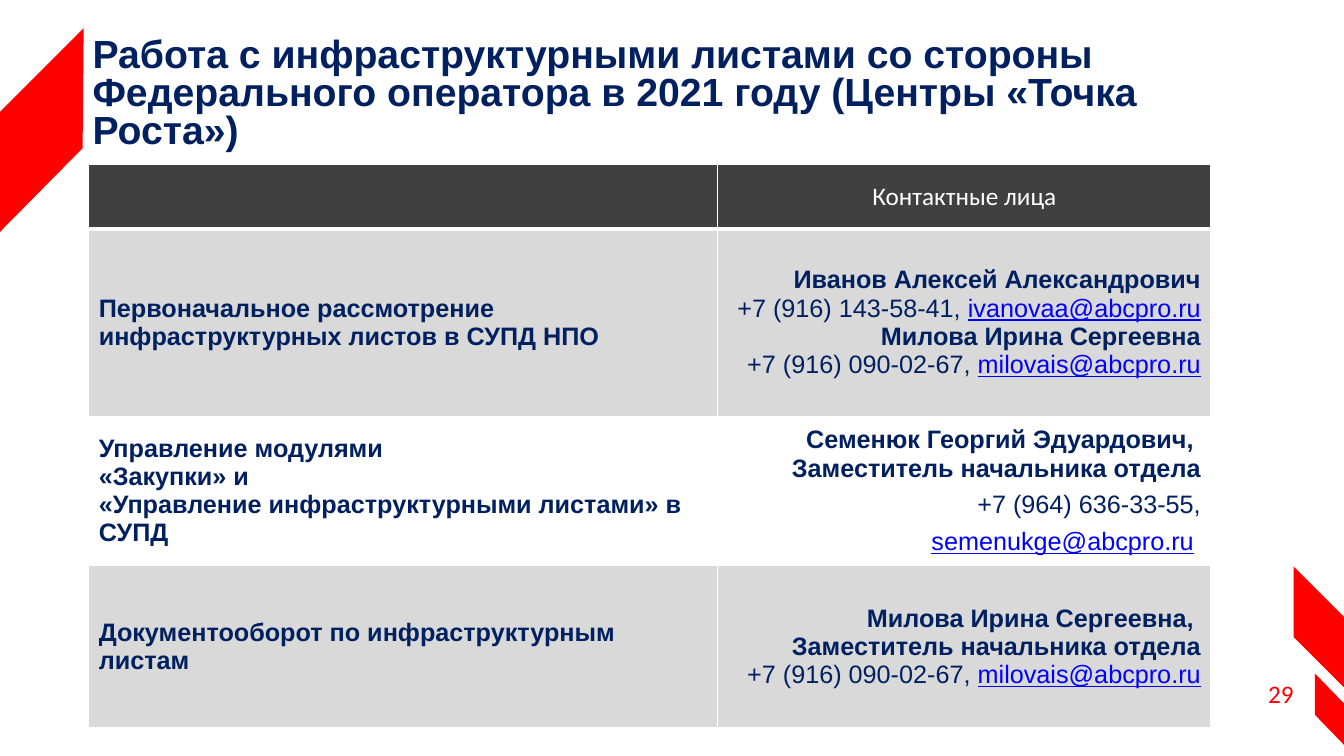
from lxml import etree
from pptx import Presentation
from pptx.dml.color import RGBColor
from pptx.enum.text import MSO_ANCHOR, PP_ALIGN
from pptx.oxml.ns import qn
from pptx.util import Inches, Pt

LEFT, MID, RIGHT = PP_ALIGN.LEFT, PP_ALIGN.CENTER, PP_ALIGN.RIGHT
CENTER = MSO_ANCHOR.MIDDLE

RED, NAVY, BLUE = "FF0000", "002060", "0000FF"
WHITE, DARK, GREY = "FFFFFF", "404040", "D9D9D9"

BANDS = [
    [(0, 2.3), (0, 1.11), (0.83, 0.28), (0.82, 1.47)],
    [(13.33, 6.82), (12.83, 6.32), (12.83, 5.62), (13.33, 6.12)],
    [(13.33, 7.39), (13.04, 7.09), (13.04, 6.68), (13.33, 6.98)],
]
TITLE = ("Работа с инфраструктурными листами со стороны Федерального "
         "оператора в 2021 году (Центры «Точка Роста»)")

# Each contact line is (text before the address, address, text after, spacing);
# a plain string is a bold line.
MILOVA = ("+7 (916) 090-02-67, ", "milovais@abcpro.ru", "", None)
DEPUTY = "Заместитель начальника отдела"
ROWS = [
    (["Первоначальное рассмотрение инфраструктурных листов в СУПД НПО"],
     ["Иванов Алексей Александрович",
      ("+7 (916) 143-58-41, ", "ivanovaa@abcpro.ru", "", None),
      "Милова Ирина Сергеевна", MILOVA]),
    (["Управление модулями", "«Закупки» и",
      "«Управление инфраструктурными листами» в СУПД"],
     ["Семенюк Георгий Эдуардович, ", DEPUTY,
      ("+7 (964) 636-33-55, ", "semenukge@abcpro.ru", " ", 1.3)]),
    (["Документооборот по инфраструктурным листам"],
     ["Милова Ирина Сергеевна, ", DEPUTY, MILOVA]),
]
WIDTHS = [6.24, 4.89]
HEIGHTS = [0.64, 1.86, 1.48, 1.61]


def color(code):
    return RGBColor.from_string(code)


class Deck:
    def __init__(self):
        self.show = Presentation()
        self.show.slide_width = Inches(13.33)
        self.show.slide_height = Inches(7.5)
        self.slide = self.show.slides.add_slide(self.show.slide_layouts[6])
        self.face = "Arial"
        self.size = 18

    def style(self, font, tint=NAVY, bold=False, size=None, face=None):
        font.name = face or self.face
        font.size = Pt(size or self.size)
        font.bold = bold
        font.color.rgb = color(tint)

    def band(self, points):
        pen = self.slide.shapes.build_freeform(
            Inches(points[0][0]), Inches(points[0][1]))
        pen.add_line_segments([(Inches(x), Inches(y)) for x, y in points[1:]])
        shape = pen.convert_to_shape()
        shape.shadow.inherit = False
        shape.fill.solid()
        shape.fill.fore_color.rgb = color(RED)
        shape.line.fill.background()

    def text(self, box, words, align=LEFT, inset=0.1, lead=None, **look):
        shape = self.slide.shapes.add_textbox(*map(Inches, box))
        frame = shape.text_frame
        frame.word_wrap = True
        frame.vertical_anchor = CENTER
        frame.margin_left = frame.margin_right = Inches(inset)
        line = frame.paragraphs[0]
        line.text = words
        line.alignment = align
        line.line_spacing = lead
        self.style(line.font, **look)

    def table(self, left, top, widths, heights):
        frame = self.slide.shapes.add_table(
            len(heights), len(widths), Inches(left), Inches(top),
            Inches(sum(widths)), Inches(sum(heights)))
        grid = frame.table
        grid.horz_banding = False
        for col, width in zip(grid.columns, widths):
            col.width = Inches(width)
        for row, height in zip(grid.rows, heights):
            row.height = Inches(height)
        return grid

    def paint(self, cell, fill=None, base=1):
        """Give a cell white borders, base points thick below, and a fill."""
        cell.vertical_anchor = CENTER
        props = cell._tc.get_or_add_tcPr()
        for side, width in (("L", 1), ("R", 1), ("T", 1), ("B", base)):
            edge = etree.SubElement(props, qn("a:ln" + side), w=str(Pt(width)))
            solid = etree.SubElement(edge, qn("a:solidFill"))
            etree.SubElement(solid, qn("a:srgbClr"), val=WHITE)
        if fill:
            cell.fill.solid()
            cell.fill.fore_color.rgb = color(fill)
        else:
            cell.fill.background()

    def lines(self, cell, items, align):
        frame = cell.text_frame
        for i, item in enumerate(items):
            line = frame.add_paragraph() if i else frame.paragraphs[0]
            line.alignment = align
            if isinstance(item, str):
                line.text = item
                self.style(line.font, bold=True)
            else:
                self.contact(line, *item)

    def contact(self, line, phone, mail, tail, lead):
        line.line_spacing = lead
        for words, tint in ((phone, NAVY), (mail, BLUE), (tail, NAVY)):
            if words:
                run = line.add_run()
                run.text = words
                self.style(run.font, tint)
                run.font.underline = tint == BLUE


def main():
    deck = Deck()
    deck.text((12.38, 6.68, 0.5, 0.4), "29", RIGHT, inset=0.05,
              tint=RED, face="Calibri")
    for points in BANDS:
        deck.band(points)
    deck.text((0.82, 0.33, 11.25, 1.23), TITLE, lead=0.8, bold=True, size=28)

    grid = deck.table(0.88, 1.63, WIDTHS, HEIGHTS)
    for col in range(len(WIDTHS)):
        deck.paint(grid.cell(0, col), DARK, base=3)
    head = grid.cell(0, 1).text_frame.paragraphs[0]
    head.text = "Контактные лица"
    head.alignment = MID
    deck.style(head.font, WHITE, face="Calibri")

    for r, row in enumerate(ROWS, 1):
        for c, (items, align) in enumerate(zip(row, (LEFT, RIGHT))):
            cell = grid.cell(r, c)
            deck.paint(cell, GREY if r % 2 else None)
            deck.lines(cell, items, align)
    deck.show.save("out.pptx")


if __name__ == "__main__":
    main()
